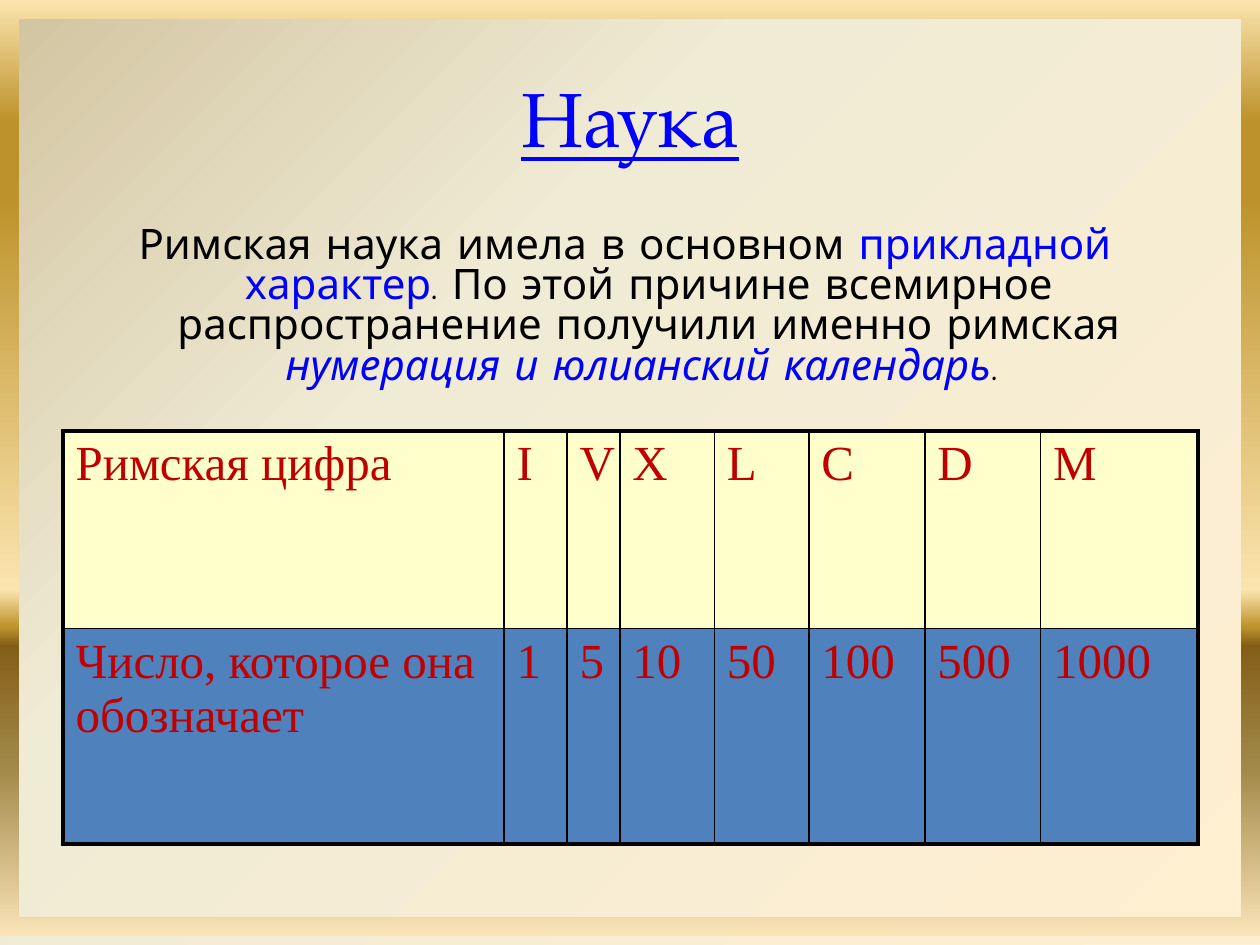
from pptx import Presentation
from pptx.dml.color import RGBColor
from pptx.enum.shapes import MSO_SHAPE
from pptx.enum.text import MSO_ANCHOR, MSO_AUTO_SIZE, PP_ALIGN
from pptx.oxml import parse_xml
from pptx.oxml.ns import nsdecls, qn
from pptx.util import Inches, Pt

COLORS = {
    "blue": "0000FF", "black": "000000", "red": "C00000",
    "cream": "FFFFCC", "steel": "4F81BD",
}
BACKGROUND_STOPS = [(0, "FFEFD1"), (65, "F0EBD5"), (100, "D1C39F")]
FRAME_STOPS = [
    (0, "FBE4AE"), (13, "BD922A"), (21, "BD922A"), (63, "FBE4AE"),
    (67, "BD922A"), (69, "835E17"), (82, "A28949"), (100, "FAE3B7"),
]


def set_gradient(parent, stops, direction):
    """Replace the solid fill inside parent with a multi-stop gradient."""
    stop_xml = "".join(
        f'<a:gs pos="{position * 1000}"><a:srgbClr val="{color}"/></a:gs>'
        for position, color in stops)
    gradient = parse_xml(
        f'<a:gradFill {nsdecls("a")} rotWithShape="1">'
        f'<a:gsLst>{stop_xml}</a:gsLst>{direction}</a:gradFill>')
    parent.replace(parent.find(qn("a:solidFill")), gradient)


def format_run(run, font_name, size, color):
    run.font.name = font_name
    run.font.size = Pt(size)
    run.font.color.rgb = RGBColor.from_string(COLORS[color])


presentation = Presentation()
presentation.slide_width, presentation.slide_height = Inches(10), Inches(7.5)
slide = presentation.slides.add_slide(presentation.slide_layouts[1])

# Background, lightest in the bottom right corner
slide.background.fill.solid()
set_gradient(
    slide.background._cSld.find(qn("p:bg")).find(qn("p:bgPr")), BACKGROUND_STOPS,
    '<a:path path="circle"><a:fillToRect l="100000" t="100000"/></a:path>')

# Golden frame behind everything else
frame = slide.shapes.add_shape(MSO_SHAPE.FRAME, 0, 0, Inches(10), Inches(7.43))
frame.adjustments[0] = 0.02
frame.shadow.inherit = False
frame.line.fill.background()
frame.fill.solid()
set_gradient(frame._element.spPr, FRAME_STOPS, '<a:lin ang="5400000" scaled="1"/>')
slide.shapes._spTree.insert(2, frame._element)

# Title
title = slide.shapes.title
title.left, title.top, title.width, title.height = map(Inches, (0.5, 0.3, 9, 1.25))
title.text_frame.text = "Наука"
title.text_frame.vertical_anchor = MSO_ANCHOR.MIDDLE
title_paragraph = title.text_frame.paragraphs[0]
title_paragraph.alignment = PP_ALIGN.CENTER
format_run(title_paragraph.runs[0], "TeX Gyre Pagella", 44, "blue")
title_paragraph.runs[0].font.underline = True

# Body paragraph with highlighted phrases
body = slide.placeholders[1]
body.left, body.top, body.width, body.height = map(Inches, (0.5, 1.75, 8.92, 1.92))
body.text_frame.auto_size = MSO_AUTO_SIZE.NONE
paragraph = body.text_frame.paragraphs[0]
paragraph.alignment = PP_ALIGN.CENTER
paragraph.line_spacing = 0.8
properties = paragraph._p.get_or_add_pPr()
properties.set("marL", str(Inches(0.38)))
properties.set("indent", str(Inches(-0.38)))
properties.append(parse_xml(f'<a:buNone {nsdecls("a")}/>'))
for text, color, italic in [
    ("Римская наука имела в основном ", "black", False),
    ("прикладной характер", "blue", False),
    (". По этой причине всемирное распространение получили именно римская ",
     "black", False),
    ("нумерация и юлианский календарь", "blue", True),
    (". ", "black", False),
]:
    run = paragraph.add_run()
    run.text = text
    format_run(run, "Comic Neue", 24, color)
    run.font.italic = italic

# Table of Roman numerals
rows = [
    ["Римская цифра", "I", "V", "X", "L", "C", "D", "M"],
    ["Число, которое она обозначает", "1", "5", "10", "50", "100", "500", "1000"],
]
row_heights = [1.57, 1.71]
row_fills = ["cream", "steel"]
column_widths = [3.5, 0.5, 0.42, 0.75, 0.75, 0.92, 0.92, 1.25]
last_row, last_column = len(rows) - 1, len(column_widths) - 1
table = slide.shapes.add_table(
    len(rows), len(column_widths), Inches(0.5), Inches(3.42),
    Inches(sum(column_widths)), Inches(sum(row_heights))).table
table.first_row = table.horz_banding = False
for column, width in zip(table.columns, column_widths):
    column.width = Inches(width)

for row_index, values in enumerate(rows):
    table.rows[row_index].height = Inches(row_heights[row_index])
    for column_index, value in enumerate(values):
        cell = table.cell(row_index, column_index)
        cell.text_frame.text = value
        format_run(cell.text_frame.paragraphs[0].runs[0],
                   "Times New Roman", 28, "red")
        cell.fill.solid()
        cell.fill.fore_color.rgb = RGBColor.from_string(COLORS[row_fills[row_index]])

        # Thick lines on the outer edges, thin ones between cells
        outer_edges = {
            "lnL": column_index == 0, "lnR": column_index == last_column,
            "lnT": row_index == 0, "lnB": row_index == last_row,
        }
        cell_properties = cell._tc.get_or_add_tcPr()
        for position, (side, is_outer) in enumerate(outer_edges.items()):
            cell_properties.insert(position, parse_xml(
                f'<a:{side} {nsdecls("a")} w="{Pt(2.25 if is_outer else 1)}">'
                f'<a:solidFill><a:srgbClr val="{COLORS["black"]}"/></a:solidFill>'
                f'</a:{side}>'))

presentation.save("out.pptx")
